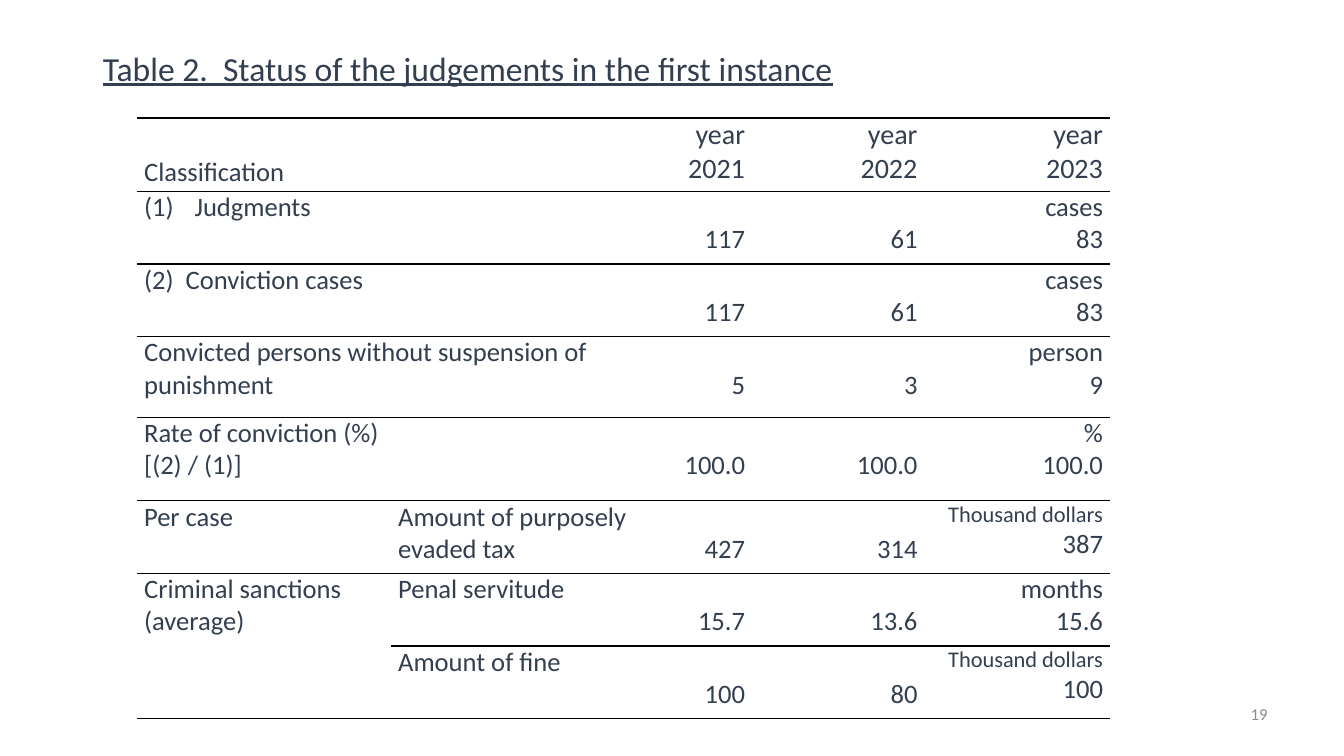
from pptx import Presentation
from pptx import util as u
from pptx.dml.color import RGBColor
from pptx.enum import text
from lxml import etree

# Content
TITLE = "Table 2.  Status of the judgements in the first instance"
PAGE_NUMBER = "19"
YEARS = ["2021", "2022", "2023"]
# (label, sublabel, unit, values for each year)
ROWS = [
    ("Judgments", "", "cases", ["117", "61", "83"]),
    ("(2)  Conviction cases", "", "cases", ["117", "61", "83"]),
    ("Convicted persons without suspension of punishment", "", "person", ["5", "3", "9"]),
    ("Rate of conviction (%)\n[(2) / (1)]", "", "%", ["100.0", "100.0", "100.0"]),
    ("Per case", "Amount of purposely evaded tax", "Thousand dollars", ["427", "314", "387"]),
    ("Criminal sanctions (average)", "Penal servitude", "months", ["15.7", "13.6", "15.6"]),
    ("", "Amount of fine", "Thousand dollars", ["100", "80", "100"]),
]

# Design
COLORS = {"ink": "333F50", "rule": "000000", "page": "8C8C8C"}
FONT = "Calibri"
COLUMN_WIDTHS = [2.52, 2.61, 0.97, 1.71, 1.84]
ROW_HEIGHTS = [0.73, 0.72, 0.72, 0.8, 0.83, 0.72, 0.72, 0.72]
RULE_WIDTHS = [1.5, 1.5, 1, 1, 1, 1, 1, 1, 1.5]
LINE_DROP = 0.32  # height of one text line, moves a value to the second line
HEADER_DROP = 0.38
LAST = len(ROWS)
DRAWING = "http://schemas.openxmlformats.org/drawingml/2006/main"


def add_xml(parent, tag, **attributes):
    return etree.SubElement(parent, f"{{{DRAWING}}}{tag}", attributes)


def style_paragraph(paragraph, size, color="ink", align=text.PP_ALIGN.LEFT):
    paragraph.alignment = align
    for run in paragraph.runs:
        run.font.name = FONT
        run.font.size = u.Pt(size)
        run.font.color.rgb = RGBColor.from_string(COLORS[color])


def fill_cell(cell, wording, sizes=(19, 19), align=text.PP_ALIGN.LEFT, drop=0):
    cell.margin_left = cell.margin_right = u.Inches(0.07)
    cell.margin_top, cell.margin_bottom = u.Inches(drop), 0
    cell.text_frame.text = wording
    for paragraph, size in zip(cell.text_frame.paragraphs, sizes):
        style_paragraph(paragraph, size, align=align)


def rule_cell(cell, top, bottom):
    cell.fill.background()
    properties = cell._tc.get_or_add_tcPr()
    for position, (side, width) in enumerate(zip("LRTB", (0, 0, top, bottom))):
        line = add_xml(properties, f"ln{side}", w=str(u.Pt(width)))
        if width:
            add_xml(add_xml(line, "solidFill"), "srgbClr", val=COLORS["rule"])
        else:
            add_xml(line, "noFill")
        properties.insert(position, line)


presentation = Presentation()
presentation.slide_width, presentation.slide_height = u.Inches(13.33), u.Inches(7.5)
slide = presentation.slides.add_slide(presentation.slide_layouts[5])

# Title
title = slide.shapes.title
title.left, title.top, title.width, title.height = map(u.Inches, (0.75, 0.39, 8.66, 0.57))
frame = title.text_frame
frame.text = TITLE
frame.auto_size = text.MSO_AUTO_SIZE.NONE
frame.vertical_anchor = text.MSO_ANCHOR.MIDDLE
frame.margin_left = u.Inches(0.27)
style_paragraph(frame.paragraphs[0], 24)
frame.paragraphs[0].runs[0].font.underline = True

# Table grid
table = slide.shapes.add_table(
    len(ROW_HEIGHTS), len(COLUMN_WIDTHS), u.Inches(1.36), u.Inches(1.17),
    u.Inches(sum(COLUMN_WIDTHS)), u.Inches(sum(ROW_HEIGHTS))).table
table.first_row = table.horz_banding = False
for column, width in zip(table.columns, COLUMN_WIDTHS):
    column.width = u.Inches(width)
for row, height in zip(table.rows, ROW_HEIGHTS):
    row.height = u.Inches(height)

# Header row
right = text.PP_ALIGN.RIGHT
fill_cell(table.cell(0, 0), "Classification", drop=HEADER_DROP)
for c, year in enumerate(YEARS, 2):
    fill_cell(table.cell(0, c), f"year\n{year}", (20, 20), right)

# Body rows: the unit stands above the last value only
for r, (label, sublabel, unit, values) in enumerate(ROWS, 1):
    fill_cell(table.cell(r, 0), label)
    fill_cell(table.cell(r, 1), sublabel)
    for c, value in enumerate(values[:-1], 2):
        fill_cell(table.cell(r, c), value, align=right, drop=LINE_DROP)
    unit_size = 16 if unit == "Thousand dollars" else 19
    fill_cell(table.cell(r, 4), f"{unit}\n{values[-1]}", (unit_size, 19), right)

# Numbered label of the first body row
numbered = table.cell(1, 0).text_frame.paragraphs[0]._p.get_or_add_pPr()
numbered.set("marL", str(u.Inches(0.5)))
numbered.set("indent", str(-u.Inches(0.5)))
add_xml(numbered, "buFont", typeface=FONT)
add_xml(numbered, "buAutoNum", type="arabicParenBoth")

# Horizontal rules, with none inside the two-row label
for r in range(LAST + 1):
    for c in range(len(COLUMN_WIDTHS)):
        top, bottom = RULE_WIDTHS[r], RULE_WIDTHS[r + 1]
        if c == 0 and r == LAST - 1:
            bottom = RULE_WIDTHS[-1]
        if c == 0 and r == LAST:
            top = 0
        rule_cell(table.cell(r, c), top, bottom)

# Merged labels
for r in range(5):
    table.cell(r, 0).merge(table.cell(r, 1))
table.cell(LAST - 1, 0).merge(table.cell(LAST, 0))

# Page number
page_box = slide.shapes.add_textbox(*map(u.Inches, (9.89, 6.83, 2.78, 0.5)))
page_frame = page_box.text_frame
page_frame.word_wrap = True
page_frame.vertical_anchor = text.MSO_ANCHOR.MIDDLE
page_frame.text = PAGE_NUMBER
style_paragraph(page_frame.paragraphs[0], 12, "page", right)

presentation.save("out.pptx")
